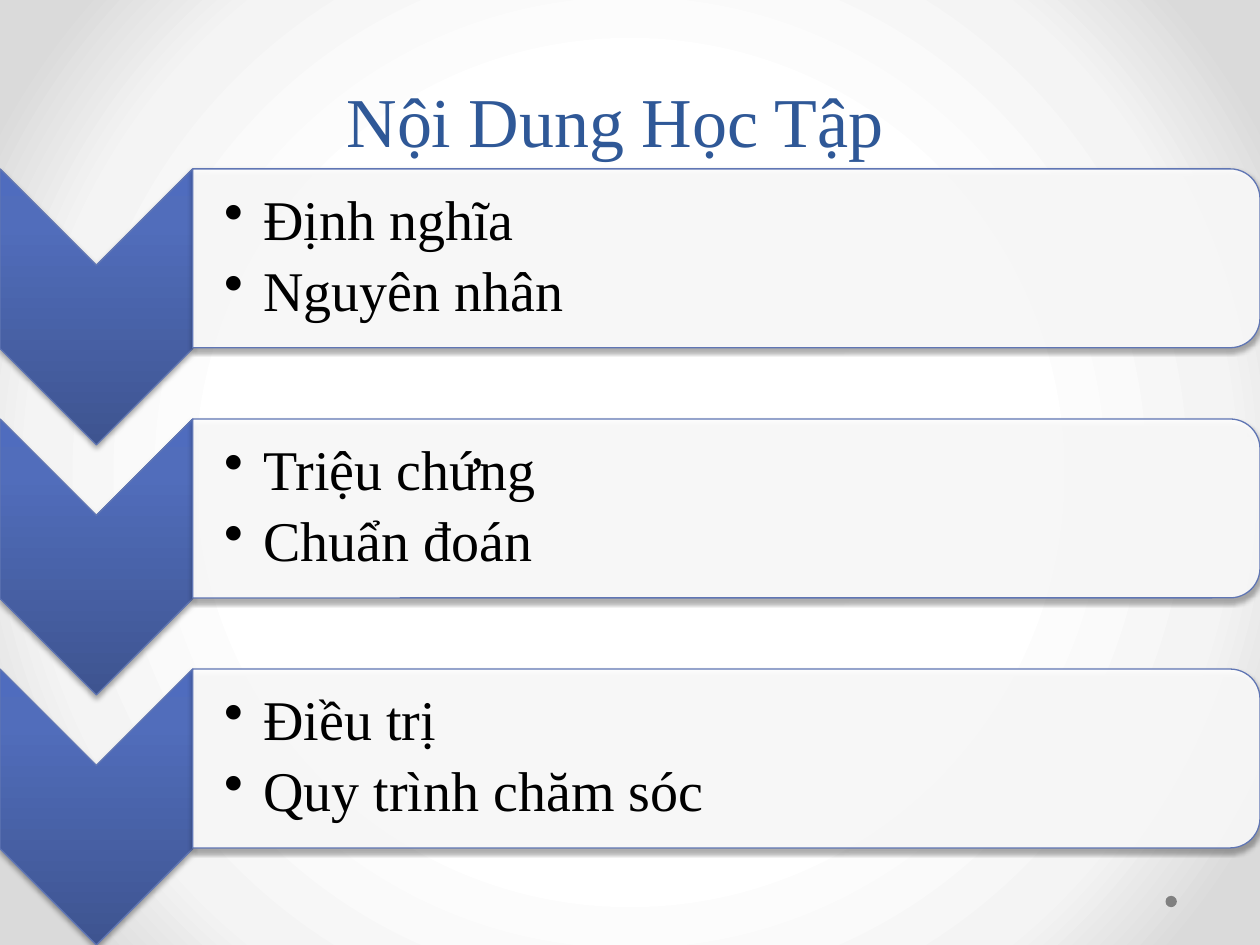
from lxml import etree
from pptx import Presentation
from pptx.dml.color import RGBColor
from pptx.enum.shapes import MSO_SHAPE as Shape
from pptx.enum.text import MSO_ANCHOR as Anchor, PP_ALIGN as Align
from pptx.oxml import parse_xml
from pptx.oxml.ns import nsdecls
from pptx.util import Inches, Pt

FONT = "Times New Roman"
SECTIONS = [
    ("Định nghĩa", "Nguyên nhân"),
    ("Triệu chứng", "Chuẩn đoán"),
    ("Điều trị", "Quy trình chăm sóc"),
]
# Grid in inches: a chevron column, a panel column and three rows
WIDTH, HEIGHT = 10, 7.5
TOP, PITCH = 1.34, 1.985
CHEVRON_W, CHEVRON_H, PANEL_H = 1.53, 2.19, 1.42
PANEL_W = WIDTH - CHEVRON_W
SHADOW = f"""<a:effectLst {nsdecls('a')}>
  <a:outerShdw blurRad="{Pt(3.1)}" dist="{Pt(1.8)}" dir="5400000" rotWithShape="0">
    <a:srgbClr val="000000"><a:alpha val="35000"/></a:srgbClr>
  </a:outerShdw></a:effectLst>"""


def color(value):
    return RGBColor.from_string(value)


def gradient(stops, direction):
    marks = "".join(f'<a:gs pos="{share * 1000}"><a:srgbClr val="{value}"/></a:gs>'
                    for share, value in stops)
    return (f'<a:gradFill {nsdecls("a")} rotWithShape="0">'
            f"<a:gsLst>{marks}</a:gsLst>{direction}</a:gradFill>")


deck = Presentation()
deck.slide_width, deck.slide_height = Inches(WIDTH), Inches(HEIGHT)
slide = deck.slides.add_slide(deck.slide_layouts[6])
shapes = slide.shapes

# Background: light centre, grey corners
glow = gradient([(50, "FFFFFF"), (76, "F4F4F4"), (92, "DADADA")],
                '<a:path path="circle"><a:fillToRect l="50000" t="50000" '
                'r="50000" b="50000"/></a:path>')
slide.element.cSld.insert(0, parse_xml(
    f'<p:bg {nsdecls("p", "a")}><p:bgPr>{glow}<a:effectLst/></p:bgPr></p:bg>'))

# Footer dot
dot = shapes.add_shape(Shape.OVAL, Inches(9.25), Inches(7.11), Inches(0.09), Inches(0.09))
dot.shadow.inherit = False
dot.fill.solid()
dot.fill.fore_color.rgb = color("808080")
dot.line.fill.background()

# Title
title = shapes.add_textbox(Inches(0.92), 0, Inches(7.92), Inches(1.33)).text_frame
title.word_wrap = True
title.vertical_anchor = Anchor.BOTTOM
heading = title.paragraphs[0]
heading.text = "Nội Dung Học Tập"
heading.alignment = Align.CENTER
heading.line_spacing = Pt(58)
heading.font.name, heading.font.size = FONT, Pt(40)
heading.font.color.rgb = color("2F5897")

# Section rows
for row, topics in enumerate(SECTIONS):
    top = TOP + row * PITCH

    # Chevron and panel, both turned a quarter to the right
    for kind, left, across, down in [
        (Shape.CHEVRON, 0, CHEVRON_W, CHEVRON_H),
        (Shape.ROUND_2_SAME_RECTANGLE, CHEVRON_W, PANEL_W, PANEL_H),
    ]:
        part = shapes.add_shape(kind, Inches(left + (across - down) / 2),
                                Inches(top + (down - across) / 2),
                                Inches(down), Inches(across))
        part.rotation = 90
        part.line.color.rgb = color("6076B4")
        part.line.width = Pt(0.75)
        props = part.element.spPr
        if kind == Shape.CHEVRON:
            blues = [(0, "3E5490"), (80, "516DBB"), (100, "4F6CBE")]
            props.insert(2, parse_xml(gradient(blues, '<a:lin ang="16200000" scaled="0"/>')))
        else:
            part.fill.solid()
            part.fill.fore_color.rgb = color("FFFFFF")
            fill = props.find(".//{*}solidFill/{*}srgbClr")
            etree.SubElement(fill, fill.tag.replace("srgbClr", "alpha"), val="90000")
        props.append(parse_xml(SHADOW))

    # Topics on the panel
    frame = shapes.add_textbox(Inches(CHEVRON_W), Inches(top + 0.06),
                               Inches(8.4), Inches(1.29)).text_frame
    frame.word_wrap = True
    frame.vertical_anchor = Anchor.MIDDLE
    frame.margin_left = Inches(0.25)
    frame.margin_top = frame.margin_right = frame.margin_bottom = Inches(0.02)
    for number, topic in enumerate(topics):
        line = frame.add_paragraph() if number else frame.paragraphs[0]
        line.text = topic
        line.line_spacing, line.space_after = 0.9, Pt(6)
        layout = line._p.get_or_add_pPr()
        layout.set("marL", str(Inches(0.31)))
        layout.set("indent", str(-Inches(0.31)))
        layout.append(parse_xml(f'<a:buChar {nsdecls("a")} char="•"/>'))
        line.font.name, line.font.size = FONT, Pt(32)
        line.font.color.rgb = color("000000")

deck.save("out.pptx")
